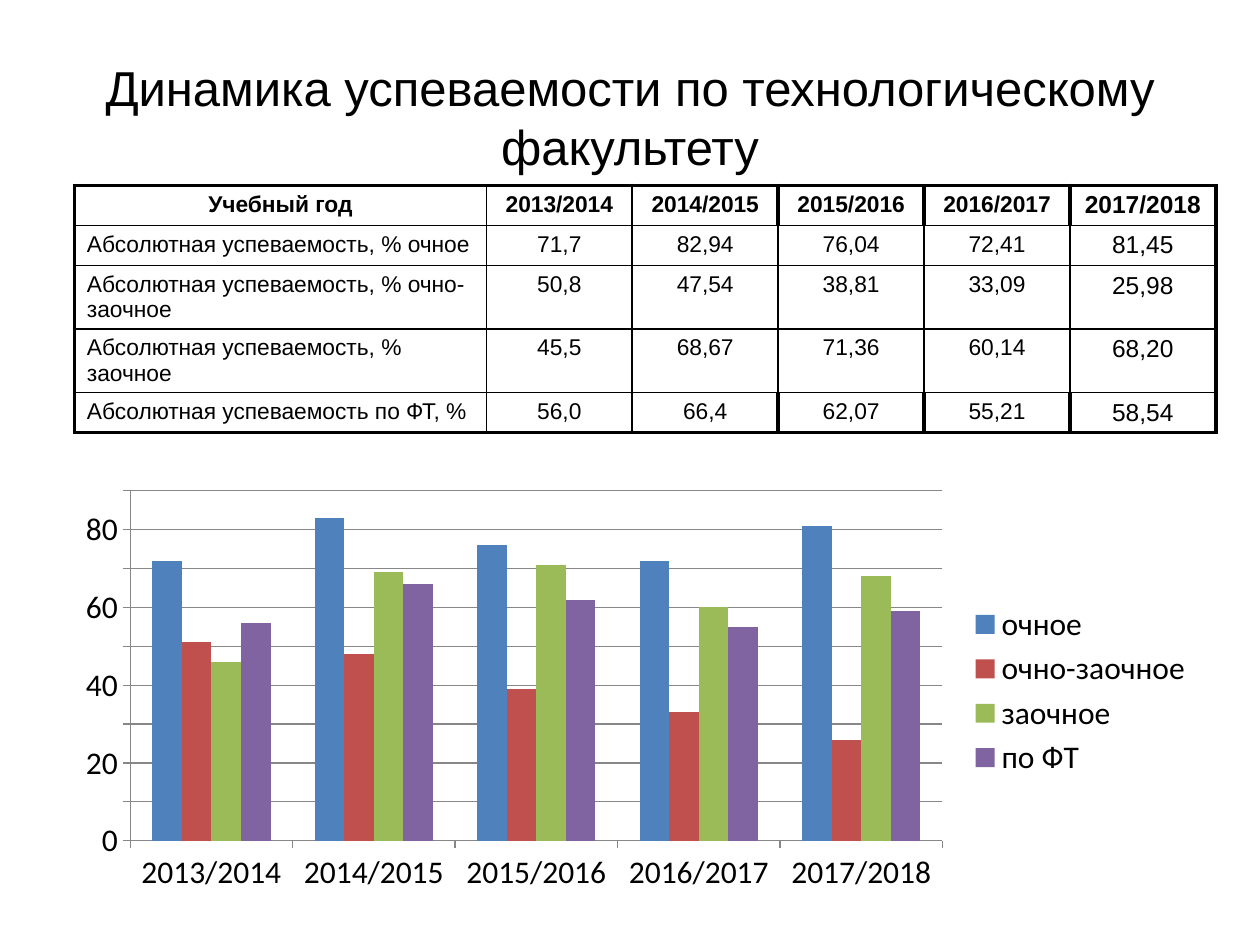
from typing import NamedTuple

from lxml.etree import SubElement
from pptx import Presentation
from pptx.chart.data import CategoryChartData
from pptx.dml.color import RGBColor
from pptx.enum.chart import XL_CHART_TYPE as ChartType
from pptx.enum.chart import XL_LEGEND_POSITION as LegendPosition
from pptx.enum.chart import XL_TICK_MARK as TickMark
from pptx.enum.text import MSO_ANCHOR as Anchor
from pptx.enum.text import PP_ALIGN as Align
from pptx.oxml.ns import qn
from pptx.util import Inches, Pt

BLACK = "000000"
GRID = "878787"
THIN, THICK = 1, 2.25
TABLE_WIDTH, LABEL_WIDTH = 9.06, 3.27


class StudyForm(NamedTuple):
    row_label: str
    name: str
    rates: tuple[str, ...]
    color: str


YEARS = ("2013/2014", "2014/2015", "2015/2016", "2016/2017", "2017/2018")
FORMS = (
    StudyForm("Абсолютная успеваемость, % очное", "очное",
              ("71,7", "82,94", "76,04", "72,41", "81,45"), "4F81BD"),
    StudyForm("Абсолютная успеваемость, % очно-заочное", "очно-заочное",
              ("50,8", "47,54", "38,81", "33,09", "25,98"), "C0504D"),
    StudyForm("Абсолютная успеваемость, % заочное", "заочное",
              ("45,5", "68,67", "71,36", "60,14", "68,20"), "9BBB59"),
    StudyForm("Абсолютная успеваемость по ФТ, %", "по ФТ",
              ("56,0", "66,4", "62,07", "55,21", "58,54"), "8064A2"),
)


def rgb(value: str) -> RGBColor:
    return RGBColor.from_string(value)


def whole_percent(rate: str) -> int:
    return round(float(rate.replace(",", ".")))


def style_font(font, name: str, size: float, bold: bool = False) -> None:
    font.name, font.size, font.bold = name, Pt(size), bold
    font.color.rgb = rgb(BLACK)


def write(text_frame, text: str, size: float, align, bold: bool = False) -> None:
    paragraph = text_frame.paragraphs[0]
    paragraph.alignment = align
    run = paragraph.add_run()
    run.text = text
    style_font(run.font, "Arial", size, bold)


def set_border(cell, side: str, width: float) -> None:
    line = SubElement(cell._tc.get_or_add_tcPr(), qn(f"a:ln{side}"), w=str(Pt(width)))
    fill = SubElement(line, qn("a:solidFill"))
    SubElement(fill, qn("a:srgbClr"), val=BLACK)


def add_title(slide, text: str) -> None:
    title = slide.shapes.title
    title.left, title.top = Inches(0.5), Inches(0.3)
    title.width, title.height = Inches(9), Inches(1.25)
    title.text_frame.vertical_anchor = Anchor.MIDDLE
    write(title.text_frame, text, 28, Align.CENTER)


def add_rate_table(slide) -> None:
    rows = [("Учебный год", *YEARS)]
    rows += [(form.row_label, *form.rates) for form in FORMS]
    last_row, last_column = len(rows) - 1, len(YEARS)
    table = slide.shapes.add_table(
        len(rows), last_column + 1,
        Inches(0.59), Inches(1.47), Inches(TABLE_WIDTH), Inches(1.4)).table
    table.first_row = table.horz_banding = False
    year_width = (TABLE_WIDTH - LABEL_WIDTH) / len(YEARS)
    for index, column in enumerate(table.columns):
        column.width = Inches(year_width if index else LABEL_WIDTH)

    def vertical_width(row: int, edge: int) -> float:
        outer = edge in (0, last_column + 1)
        return THICK if outer or (row in (0, last_row) and edge >= 3) else THIN

    for r, texts in enumerate(rows):
        table.rows[r].height = Inches(0.28)
        for c, text in enumerate(texts):
            cell = table.cell(r, c)
            set_border(cell, "L", vertical_width(r, c))
            set_border(cell, "R", vertical_width(r, c + 1))
            set_border(cell, "T", THICK if r == 0 else THIN)
            set_border(cell, "B", THICK if r == last_row else THIN)
            cell.fill.background()
            align = Align.LEFT if r and c == 0 else Align.CENTER
            write(cell.text_frame, text, 14 if c == last_column else 13, align, r == 0)


def add_rate_chart(slide) -> None:
    data = CategoryChartData()
    data.categories = YEARS
    for form in FORMS:
        data.add_series(form.name, [whole_percent(rate) for rate in form.rates])
    chart = slide.shapes.add_chart(
        ChartType.COLUMN_CLUSTERED,
        Inches(0.5), Inches(3.83), Inches(9.07), Inches(3.31), data).chart
    style_font(chart.font, "Calibri", 18)
    chart.has_title = False
    chart.has_legend = True
    chart.legend.position = LegendPosition.RIGHT
    chart.legend.include_in_layout = False

    plot = chart.plots[0]
    plot.gap_width, plot.overlap, plot.vary_by_categories = 150, 0, False
    for series, form in zip(plot.series, FORMS):
        series.format.fill.solid()
        series.format.fill.fore_color.rgb = rgb(form.color)

    value_axis = chart.value_axis
    value_axis.minimum_scale, value_axis.maximum_scale = 0, 90
    value_axis.major_unit = 10
    value_axis.has_major_gridlines = True
    chart.category_axis.major_tick_mark = TickMark.OUTSIDE
    value_axis.major_tick_mark = TickMark.OUTSIDE
    for part in (chart.category_axis, value_axis, value_axis.major_gridlines):
        part.format.line.color.rgb = rgb(GRID)
        part.format.line.width = Pt(0.75)


def main() -> None:
    presentation = Presentation()
    presentation.slide_width, presentation.slide_height = Inches(10), Inches(7.5)
    slide = presentation.slides.add_slide(presentation.slide_layouts[5])
    add_title(slide, "Динамика успеваемости по технологическому факультету")
    add_rate_table(slide)
    add_rate_chart(slide)
    presentation.save("out.pptx")


if __name__ == "__main__":
    main()
